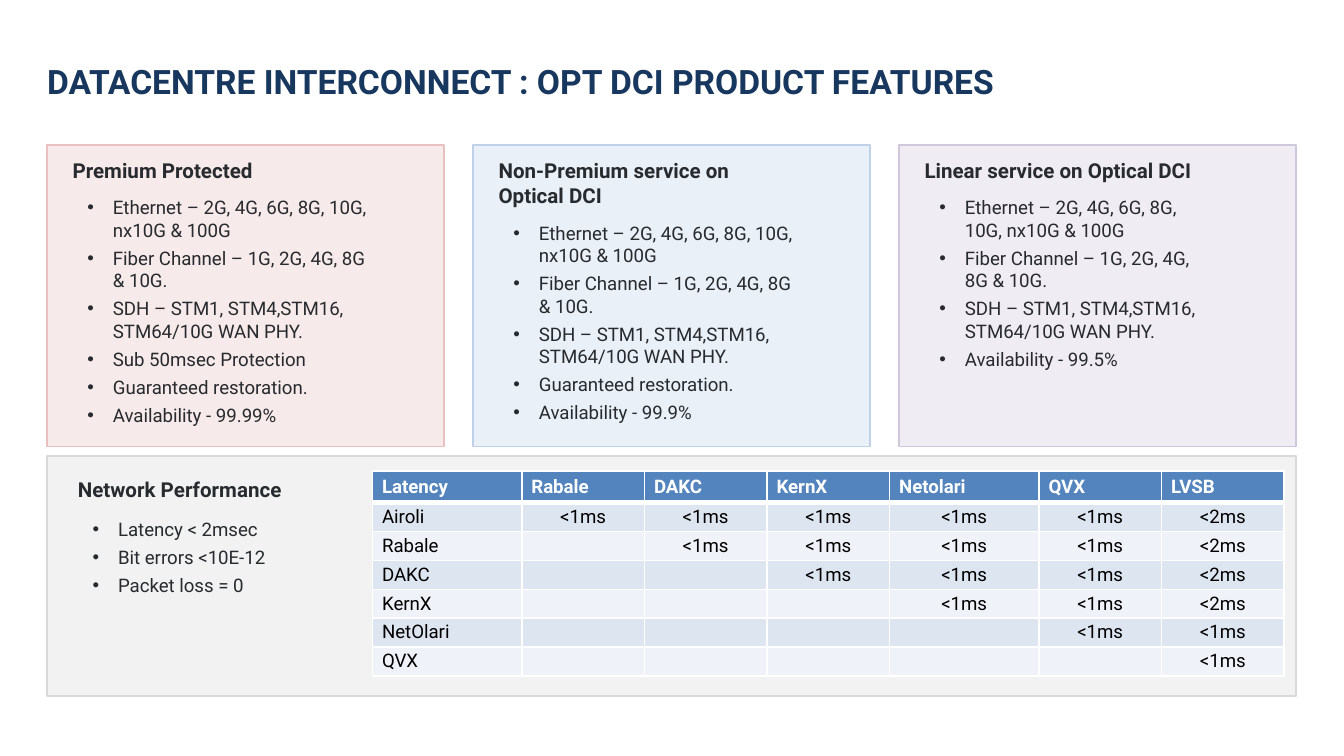
from lxml.etree import SubElement
from pptx import Presentation
from pptx.dml.color import RGBColor
from pptx.enum.shapes import MSO_SHAPE
from pptx.enum.text import MSO_ANCHOR as Anchor, PP_ALIGN as Align
from pptx.oxml.ns import qn
from pptx.util import Pt

LATENCY = [
    ["Latency", "Rabale", "DAKC", "KernX", "Netolari", "QVX", "LVSB"],
    ["Airoli", "<1ms", "<1ms", "<1ms", "<1ms", "<1ms", "<2ms"],
    ["Rabale", "", "<1ms", "<1ms", "<1ms", "<1ms", "<2ms"],
    ["DAKC", "", "", "<1ms", "<1ms", "<1ms", "<2ms"],
    ["KernX", "", "", "", "<1ms", "<1ms", "<2ms"],
    ["NetOlari", "", "", "", "", "<1ms", "<1ms"],
    ["QVX", "", "", "", "", "", "<1ms"],
]
COLUMN_WIDTHS = [80, 65.7, 65.7, 65.7, 80, 65.7, 65.7]
ROW_HEIGHTS = [17.2] + [15.45] * 6

SERVICES = [
    "Ethernet – 2G, 4G, 6G, 8G, 10G, nx10G & 100G",
    "Fiber Channel – 1G, 2G, 4G, 8G & 10G.",
    "SDH – STM1, STM4,STM16, STM64/10G WAN PHY.",
]
RESTORATION = "Guaranteed restoration."
CARDS = [
    ("Premium Protected", 200, 20.5, 175.5, "F7EAEA", "E8C0BF",
     SERVICES + ["Sub 50msec Protection", RESTORATION, "Availability - 99.99%"]),
    ("Non-Premium service on Optical DCI", 173.5, 34, 173.5, "EAF0F7", "BFD1E7",
     SERVICES + [RESTORATION, "Availability - 99.9%"]),
    ("Linear service on Optical DCI", 200, 20.5, 170.5, "F0ECF4", "D1C7DD",
     SERVICES + ["Availability - 99.5%"]),
]
PERFORMANCE = ["Latency < 2msec", "Bit errors <10E-12", "Packet loss = 0"]


def color(value):
    return RGBColor.from_string(value)


def write(paragraph, text, size=10, ink="272A2E", bold=False, align=Align.LEFT):
    paragraph.alignment = align
    run = paragraph.add_run()
    run.text = text
    run.font.name = "Roboto"
    run.font.size = Pt(size)
    run.font.bold = bold
    run.font.color.rgb = color(ink)


class FeatureSlide:
    margin = 25.2
    white = "FFFFFF"

    def __init__(self, presentation):
        self.slide = presentation.slides.add_slide(presentation.slide_layouts[5])
        self.shapes = self.slide.shapes

    def title(self, text, top, width, height):
        title = self.shapes.title
        title.left, title.top = Pt(self.margin), Pt(top)
        title.width, title.height = Pt(width), Pt(height)
        frame = title.text_frame
        frame.margin_left = 0
        frame.word_wrap = True
        frame.vertical_anchor = Anchor.MIDDLE
        write(frame.paragraphs[0], text, size=18, ink="17375E", bold=True)

    def panel(self, left, top, width, height, fill, line):
        shape = self.shapes.add_shape(
            MSO_SHAPE.RECTANGLE, Pt(left), Pt(top), Pt(width), Pt(height))
        shape.shadow.inherit = False
        shape.fill.solid()
        shape.fill.fore_color.rgb = color(fill)
        shape.line.color.rgb = color(line)
        shape.line.width = Pt(0.75)

    def text_frame(self, left, top, width, height):
        frame = self.shapes.add_textbox(
            Pt(left), Pt(top), Pt(width), Pt(height)).text_frame
        frame.word_wrap = True
        return frame

    def heading(self, text, left, top, width, height):
        frame = self.text_frame(left, top, width, height)
        write(frame.paragraphs[0], text, size=11, bold=True)

    def bullets(self, items, left, top, width, height):
        frame = self.text_frame(left, top, width, height)
        for index, item in enumerate(items):
            paragraph = frame.add_paragraph() if index else frame.paragraphs[0]
            paragraph.level = 1
            properties = paragraph._p.get_or_add_pPr()
            properties.set("marL", str(Pt(21.6)))
            properties.set("indent", str(Pt(-13.7)))
            SubElement(properties, qn("a:buFont"), typeface="Arial")
            SubElement(properties, qn("a:buChar"), char="•")
            paragraph.space_after = Pt(3)
            write(paragraph, item)

    def borders(self, cell, bottom):
        properties = cell._tc.get_or_add_tcPr()
        for side, width in (("L", 1), ("R", 1), ("T", 1), ("B", bottom)):
            line = SubElement(properties, qn(f"a:ln{side}"), w=str(Pt(width)))
            fill = SubElement(line, qn("a:solidFill"))
            SubElement(fill, qn("a:srgbClr"), val=self.white)

    def cell(self, cell, text, row, column):
        header = row == 0
        self.borders(cell, 3 if header else 1)
        cell.fill.solid()
        cell.fill.fore_color.rgb = color(
            "5384BE" if header else "DDE5F0" if row % 2 else "EFF2F8")
        cell.margin_left = cell.margin_right = Pt(5.2)
        cell.margin_top = cell.margin_bottom = 0
        cell.vertical_anchor = Anchor.MIDDLE
        paragraph = cell.text_frame.paragraphs[0]
        if text:
            write(paragraph, text, ink=self.white if header else "000000",
                  bold=header,
                  align=Align.LEFT if header or column == 0 else Align.CENTER)
        else:
            SubElement(paragraph._p, qn("a:endParaRPr"), sz="1000")

    def table(self, rows, left, top, widths, heights):
        table = self.shapes.add_table(
            len(rows), len(widths), Pt(left), Pt(top),
            Pt(sum(widths)), Pt(sum(heights))).table
        for column, width in zip(table.columns, widths):
            column.width = Pt(width)
        for row, height in zip(table.rows, heights):
            row.height = Pt(height)
        for row, values in enumerate(rows):
            for column, text in enumerate(values):
                self.cell(table.cell(row, column), text, row, column)


def main():
    presentation = Presentation()
    presentation.slide_width, presentation.slide_height = Pt(720), Pt(405)
    slide = FeatureSlide(presentation)
    slide.title("DATACENTRE INTERCONNECT : OPT DCI PRODUCT FEATURES", 29, 593, 29)

    slide.panel(slide.margin, 244.2, 669.2, 128.6, "F2F2F2", "D9D9D9")
    slide.table(LATENCY, 199.5, 252.2, COLUMN_WIDTHS, ROW_HEIGHTS)
    slide.heading("Network Performance", 34.6, 252.2, 157.5, 20.5)
    slide.bullets(PERFORMANCE, 34.6, 274.1, 157.5, 50)

    for index, (name, name_width, name_height, list_width, fill, line, items) in enumerate(CARDS):
        left = slide.margin + index * 228.2
        slide.panel(left, 77.7, 212.7, 161.5, fill, line)
        slide.heading(name, left + 6.6, 81.1, name_width, name_height)
        slide.bullets(items, left + 6.6, 81.1 + name_height, list_width, 132)

    presentation.save("out.pptx")


if __name__ == "__main__":
    main()
